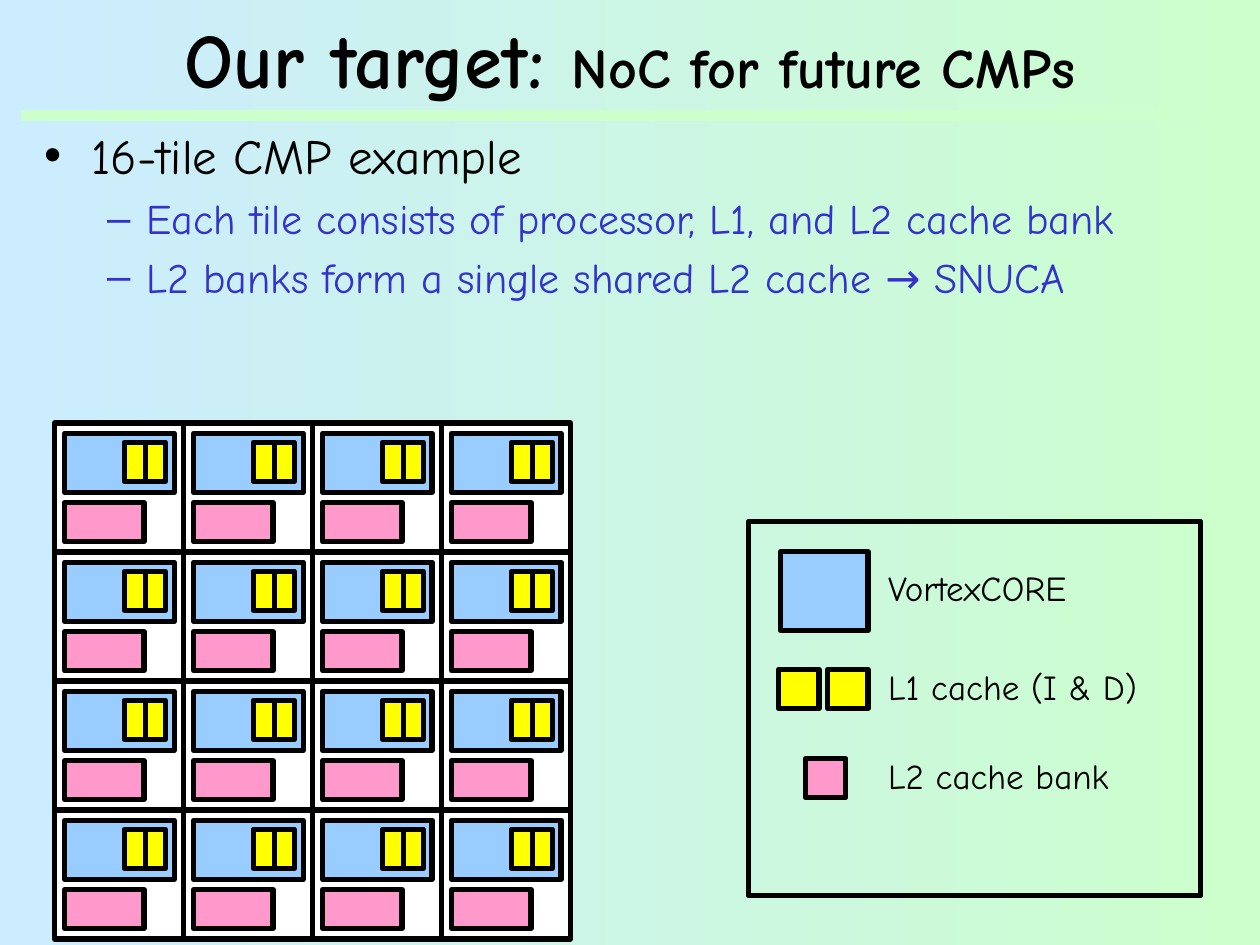
"""Build the slide on a 16-tile CMP with its legend."""
from dataclasses import dataclass
from itertools import product

from lxml.etree import SubElement
from pptx import Presentation as Deck
from pptx.dml.color import RGBColor as Rgb
from pptx.enum.shapes import MSO_CONNECTOR as Wire, MSO_SHAPE as Form
from pptx.enum.text import MSO_ANCHOR as Anchor, MSO_AUTO_SIZE as Fit, PP_ALIGN as Align
from pptx.oxml.ns import qn
from pptx.util import Pt


@dataclass(frozen=True)
class Theme:
    font: str = "Comic Neue"
    ink: str = "000000"
    accent: str = "3333CC"
    sky: str = "CCECFF"
    mint: str = "CCFFCC"
    tile: str = "FFFFFF"
    core: str = "99CCFF"
    cache: str = "FFFF00"
    bank: str = "FF99CC"
    head: int = 44
    subhead: int = 32
    lead: int = 28
    point: int = 24
    label: int = 20
    edge: int = 3
    rule: int = 6


class Page:
    def __init__(self, slide, theme):
        self.slide, self.theme = slide, theme

    def style(self, run, size, color, bold=None):
        font = run.font
        font.name, font.size, font.bold = self.theme.font, Pt(size), bold
        font.color.rgb = Rgb.from_string(color)

    def place(self, shape, left, top, width, height):
        shape.left, shape.top = Pt(left), Pt(top)
        shape.width, shape.height = Pt(width), Pt(height)

    def backdrop(self, *colors):
        fill = self.slide.background.fill
        fill.gradient()
        fill.gradient_angle = 0
        for stop, color in zip(fill.gradient_stops, colors):
            stop.color.rgb = Rgb.from_string(color)

    def rule(self, left, right, y):
        line = self.slide.shapes.add_connector(
            Wire.STRAIGHT, Pt(left), Pt(y), Pt(right), Pt(y))
        line.line.color.rgb = Rgb.from_string(self.theme.mint)
        line.line.width = Pt(self.theme.rule)
        SubElement(line._element.spPr, qn("a:effectLst"))

    def title(self, box, parts):
        shape = self.slide.shapes.title
        self.place(shape, *box)
        frame = shape.text_frame
        frame.auto_size, frame.vertical_anchor = Fit.NONE, Anchor.MIDDLE
        para = frame.paragraphs[0]
        para.alignment = Align.CENTER
        for text, size in parts:
            run = para.add_run()
            run.text = text
            self.style(run, size, self.theme.ink, True)

    def body(self, box, items):
        shape = self.slide.placeholders[1]
        self.place(shape, *box)
        frame = shape.text_frame
        frame.text = "\n".join(text for text, _ in items)
        frame.auto_size = Fit.NONE
        looks = [(self.theme.lead, self.theme.ink), (self.theme.point, self.theme.accent)]
        for para, (_, level) in zip(frame.paragraphs, items):
            para.level = level
            self.style(para.runs[0], *looks[level])

    def rect(self, box, color=None, group=None):
        shape = (group or self.slide).shapes.add_shape(Form.RECTANGLE, *map(Pt, box))
        shape.shadow.inherit = False
        if color:
            shape.fill.solid()
            shape.fill.fore_color.rgb = Rgb.from_string(color)
        else:
            shape.fill.background()
        shape.line.color.rgb = Rgb.from_string(self.theme.ink)
        shape.line.width = Pt(self.theme.edge)

    def tile(self, x, y, side):
        theme = self.theme
        group = self.slide.shapes.add_group_shape()
        parts = [
            (0, 0, side, side, theme.tile),
            (5.8, 5.8, 62.6, 33.8, theme.core),
            (51.1, 11, 12.2, 22.3, theme.cache),
            (5.8, 45.4, 45.4, 22.3, theme.bank),
            (39.8, 11, 12.2, 22.3, theme.cache),
        ]
        for left, top, width, height, color in parts:
            self.rect((x + left, y + top, width, height), color, group)

    def label(self, text, box):
        frame = self.slide.shapes.add_textbox(*map(Pt, box)).text_frame
        frame.text = text
        frame.word_wrap, frame.auto_size = False, Fit.SHAPE_TO_FIT_TEXT
        self.style(frame.paragraphs[0].runs[0], self.theme.label, self.theme.ink)


def main():
    deck = Deck()
    deck.slide_width, deck.slide_height = Pt(720), Pt(540)
    theme = Theme()
    page = Page(deck.slides.add_slide(deck.slide_layouts[1]), theme)
    page.backdrop(theme.sky, theme.mint)
    page.rule(12, 714, 66)
    page.title((18, 6, 684, 54), [
        ("Our target: ", theme.head), ("NoC for future CMPs", theme.subhead)])
    page.body((18, 68, 702, 163.5), [
        ("16-tile CMP example", 0),
        ("Each tile consists of processor, L1, and L2 cache bank", 1),
        ("L2 banks form a single shared L2 cache → SNUCA", 1),
    ])

    side = 73.7
    for col, row in product(range(4), repeat=2):
        page.tile(31.2 + col * side, 241.8 + row * side, side)

    page.rect((446, 315.3, 50, 45), theme.core)
    for left in (473, 445):
        page.rect((left, 382.5, 23, 22.3), theme.cache)
    page.rect((460.3, 433.5, 23, 22.3), theme.bank)
    page.rect((427.7, 298, 258.5, 213.8))
    for text, top, width in [("VortexCORE", 320.4, 131),
                             ("L1 cache (I & D)", 376.6, 173),
                             ("L2 cache bank", 427.7, 148)]:
        page.label(text, (500.4, top, width, 31.7))
    deck.save("out.pptx")


if __name__ == "__main__":
    main()
